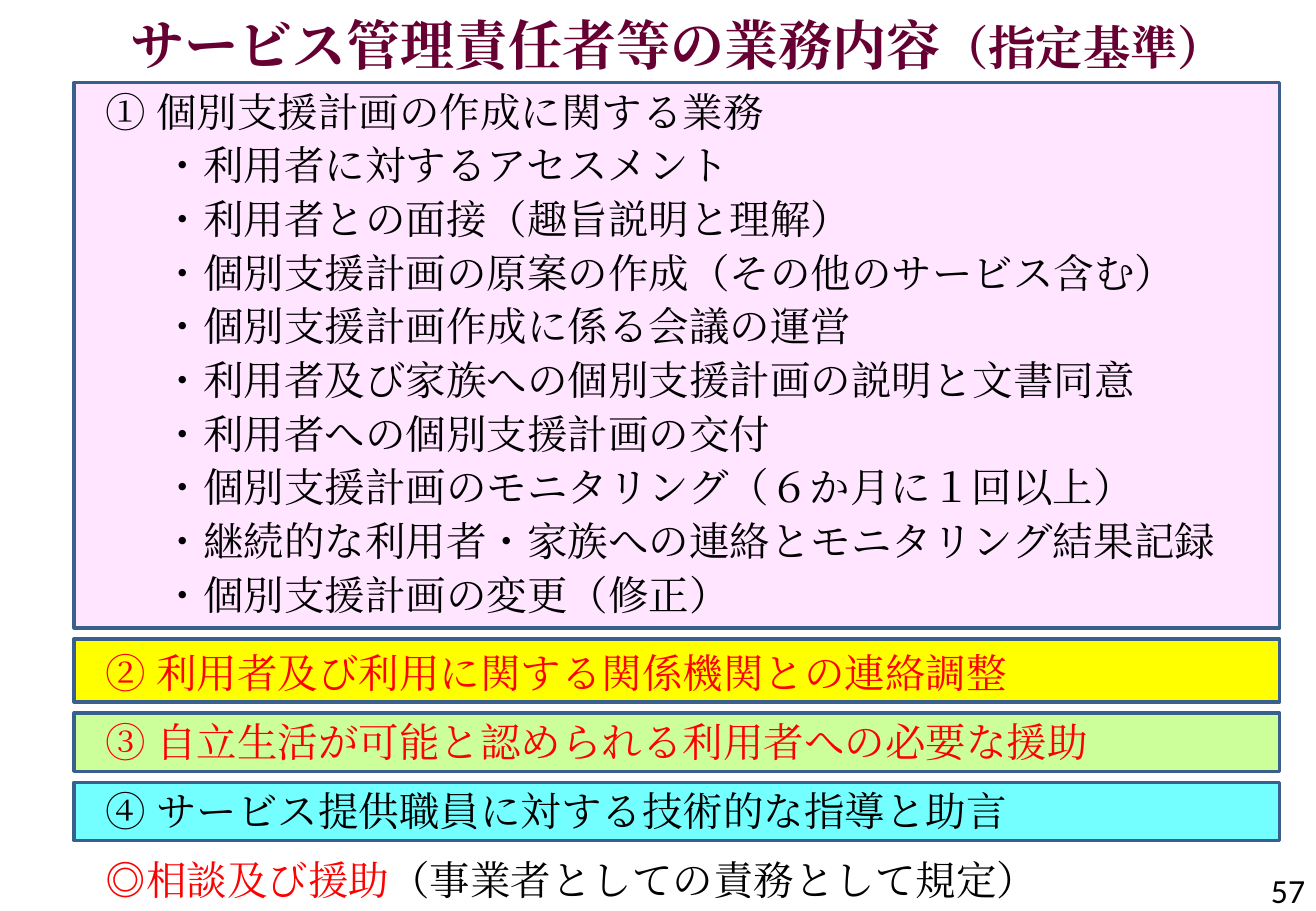
import pptx
import pptx.util
import pptx.dml.color
import pptx.enum.shapes
import pptx.enum.text
import pptx.oxml.ns
import lxml.etree

PX = 9144  # 100 px to the inch
ALIGN = pptx.enum.text.PP_ALIGN
ANCHOR = pptx.enum.text.MSO_ANCHOR
Pt = pptx.util.Pt

BLACK, RED, WINE = "000000", "FF0000", "660033"
SERIF = "Times New Roman"

TITLE = [("サービス管理責任者等の業務内容", 32), ("（指定基準）", 28)]
HEAD = "① 個別支援計画の作成に関する業務"
TASKS = [
    "利用者に対するアセスメント",
    "利用者との面接（趣旨説明と理解）",
    "個別支援計画の原案の作成（その他のサービス含む）",
    "個別支援計画作成に係る会議の運営",
    "利用者及び家族への個別支援計画の説明と文書同意",
    "利用者への個別支援計画の交付",
    "個別支援計画のモニタリング（６か月に１回以上）",
    "継続的な利用者・家族への連絡とモニタリング結果記録",
    "個別支援計画の変更（修正）",
]
DUTIES = [  # space before, runs with colour
    (18, [("② 利用者及び利用に関する関係機関との連絡調整", RED)]),
    (12, [("③ 自立生活が可能と認められる利用者への必要な援助", RED)]),
    (12, [("④ サービス提供職員に対する技術的な指導と助言", BLACK)]),
    (12, [("◎相談及び援助", RED), ("（事業者としての責務として規定）", BLACK)]),
]
BANDS = [("FFE5FF", 449), ("FFFF00", 52), ("CCFF99", 48), ("73FEFF", 48)]


def color(code):
    return pptx.dml.color.RGBColor.from_string(code)


def apply(item, values):
    for name, value in values.items():
        setattr(item, name, value)


def write(para, text, size, tint, face=SERIF, bold=False):
    run = para.add_run()
    run.text = text
    apply(run.font, {"size": Pt(size), "name": face, "bold": bold})
    run.font.color.rgb = color(tint)
    # Same face for East Asian text
    latin = run.font._element.find(pptx.oxml.ns.qn("a:latin"))
    asian = lxml.etree.Element(pptx.oxml.ns.qn("a:ea"), typeface=face)
    latin.addnext(asian)


def add_box(slide, box, anchor):
    frame = slide.shapes.add_textbox(*[n * PX for n in box]).text_frame
    apply(frame, {"word_wrap": True, "vertical_anchor": anchor})
    return frame


def add_line(frame, runs, before, left=0, hang=0):
    para = frame.add_paragraph()
    apply(para, {"space_before": Pt(before), "line_spacing": Pt(28.8)})
    props = para._p.get_or_add_pPr()
    props.set("marL", str(left * PX))
    props.set("indent", str(-hang * PX))
    for text, tint in runs:
        write(para, text, 24, tint)


def draw_bands(slide, box, gap):
    left, top, width = box
    for fill, height in BANDS:
        band = slide.shapes.add_shape(
            pptx.enum.shapes.MSO_SHAPE.RECTANGLE,
            left * PX, top * PX, width * PX, height * PX)
        band.shadow.inherit = False
        band.fill.solid()
        band.fill.fore_color.rgb = color(fill)
        band.line.color.rgb = color("3A5F8C")
        band.line.width = Pt(2)
        top += height + gap


def draw_text(slide, box):
    frame = add_box(slide, box, ANCHOR.TOP)
    # Title
    title = frame.paragraphs[0]
    apply(title, {"alignment": ALIGN.CENTER, "line_spacing": Pt(38.4)})
    for text, size in TITLE:
        write(title, text, size, WINE, bold=True)
    # Planning tasks
    add_line(frame, [(HEAD, BLACK)], 5.8)
    for task in TASKS:
        add_line(frame, [("・" + task, BLACK)], 3, 64, 17)
    # Other duties
    for before, runs in DUTIES:
        add_line(frame, runs, before, 20, 20)


def draw_number(slide, box):
    para = add_box(slide, box, ANCHOR.MIDDLE).paragraphs[0]
    para.alignment = ALIGN.RIGHT
    write(para, "57", 20, BLACK, "Calibri")


def main():
    deck = pptx.Presentation()
    apply(deck, {"slide_width": 1083 * PX, "slide_height": 750 * PX})
    slide = deck.slides.add_slide(deck.slide_layouts[6])
    draw_bands(slide, (61, 68, 992), 9)
    draw_text(slide, (77, 5, 961, 677))
    draw_number(slide, (831, 712, 253, 42))
    deck.save("out.pptx")


if __name__ == "__main__":
    main()
